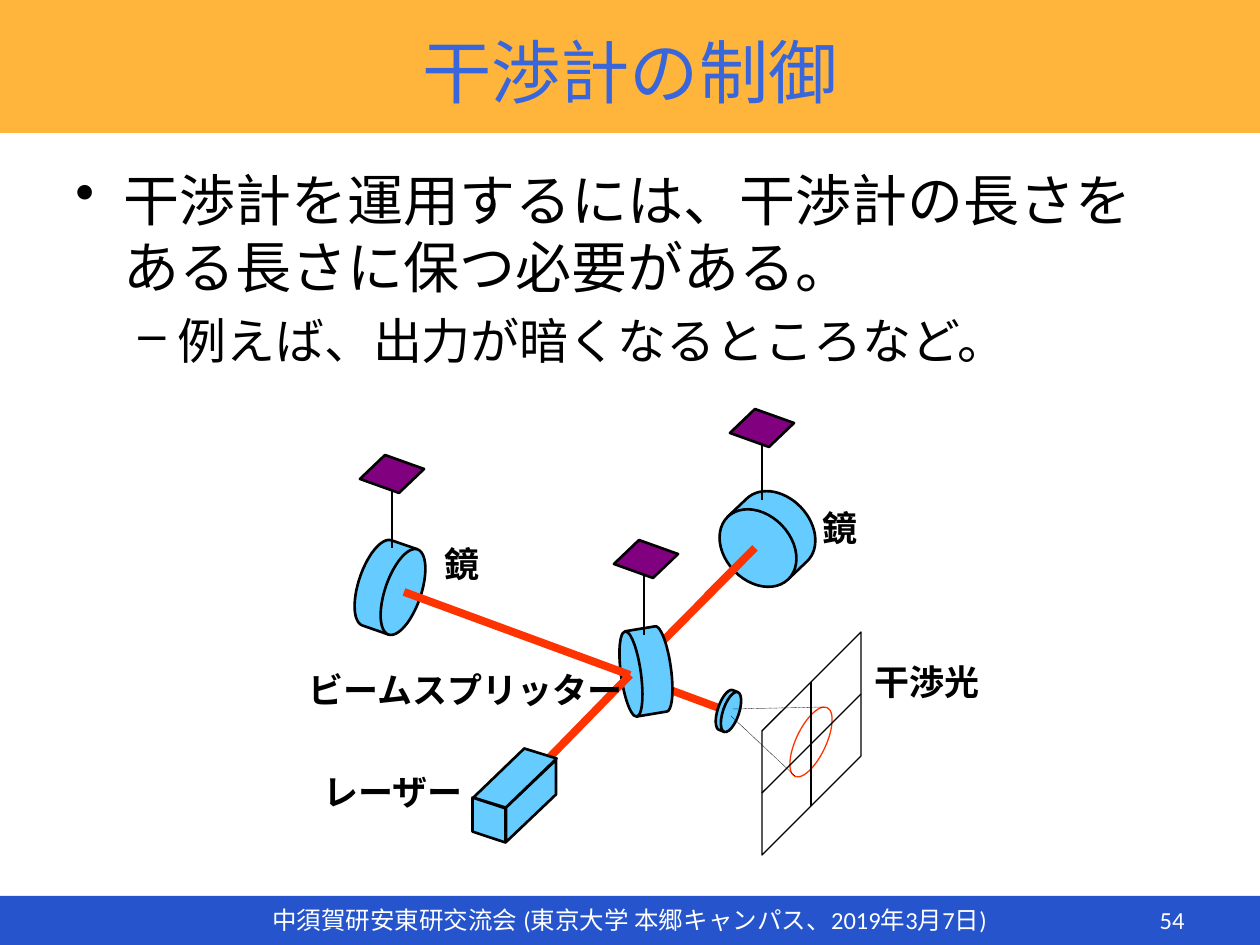
"""Build the slide on interferometer control."""
import math

from lxml import etree
from pptx import Presentation
from pptx.dml.color import RGBColor
from pptx.enum.dml import MSO_LINE
from pptx.enum.shapes import MSO_CONNECTOR, MSO_SHAPE
from pptx.enum.text import MSO_ANCHOR, PP_ALIGN
from pptx.oxml.ns import qn
from pptx.util import Pt

EMU_PER_PX = 914400 / 126
RECTANGLE = MSO_SHAPE.RECTANGLE
ELLIPSE = MSO_SHAPE.OVAL
PARALLELOGRAM = MSO_SHAPE.PARALLELOGRAM
STRAIGHT = MSO_CONNECTOR.STRAIGHT
DOTTED = MSO_LINE.ROUND_DOT
TOP, MIDDLE = MSO_ANCHOR.TOP, MSO_ANCHOR.MIDDLE
LEFT, CENTER, RIGHT = PP_ALIGN.LEFT, PP_ALIGN.CENTER, PP_ALIGN.RIGHT

FONT = "Calibri"
BLACK, WHITE = "000000", "FFFFFF"
GLASS, BEAM, PLATE = "66CCFF", "FF3300", "800080"
BEAM_WIDTH, EDGE_WIDTH, SCREEN_WIDTH, RAY_WIDTH = 4.5, 1.5, 0.75, 0.25

# box, colour
BANDS = [((0, 896, 1260, 49), "2554CC"), ((0, 0, 1260, 133), "FFB53C")]
# text, box, size, colour, alignment
FRAME_TEXTS = [
    ("中須賀研安東研交流会 (東京大学 本郷キャンパス、2019年3月7日)",
     (147, 895, 965, 50), 14, WHITE, CENTER),
    ("54", (903, 895, 294, 50), 14, WHITE, RIGHT),
    ("干渉計の制御", (63, 20, 1134, 101), 39.6, "3967DB", CENTER),
]
BODY_BOX = (63, 159, 1134, 238)
# text, bullet, level, left margin, hanging, size, space before
BODY = [
    ("干渉計を運用するには、干渉計の長さをある長さに保つ必要がある。", "•", 0, 48, 48, 32, 0),
    ("例えば、出力が暗くなるところなど。", "–", 1, 102, 39, 28, 6),
]
# text, left, top, width
LABELS = [
    ("レーザー", 311, 764, 195),
    ("干渉光", 862, 654, 195),
    ("ビームスプリッター", 296, 662, 343),
    ("鏡", 432, 536, 195),
    ("鏡", 810, 500, 195),
]
# front centre, front size, rotation, offset of the back face
SPLITTER = ((631, 674), (86, 20), 262.2, (30, -5))
LEFT_MIRROR = ((403, 592), (90, 36), 108.8, (-26, -9))
RIGHT_MIRROR = ((758, 548), (87, 66), 226, (19, -18))
LENS = ((731, 712), (42, 16), 108.8, (-5, -2))
# plate centre, wire foot
SPLITTER_HANGER = ((646, 559), (644, 635))
LEFT_HANGER = ((392, 474), (392, 548))
RIGHT_HANGER = ((762, 428), (762, 500))
# centre, size, rotation, slant
LASER_FACES = [
    ((489, 820), (45, 33), 90, 0.33),
    ((531, 801), (93, 25), 316.4, 0.96),
    ((515, 778), (68, 62), 197.2, 0.55),
]
BACK_BEAMS = [((665, 688), (719, 708)), ((658, 646), (761, 542))]
LASER_BEAM = ((548, 759), (630, 675))
LEFT_BEAM = ((404, 592), (630, 675))
RIGHT_BEAM = ((707, 596), (755, 548))
RAYS = [((733, 709), (825, 707)), ((731, 716), (795, 776))]
SCREEN = [(762, 855), (861, 756), (861, 632), (762, 731)]
SCREEN_CROSS = [((811, 682), (811, 806)), ((762, 793), (861, 694))]
RING = ((811, 742), (30, 76), 25.2)


def px(value):
    return round(value * EMU_PER_PX)


def color(value):
    return RGBColor.from_string(value)


def style(shape, fill, line=None, width=EDGE_WIDTH):
    shape.shadow.inherit = False
    if fill:
        shape.fill.solid()
        shape.fill.fore_color.rgb = color(fill)
    else:
        shape.fill.background()
    if line:
        shape.line.color.rgb = color(line)
        shape.line.width = Pt(width)
    else:
        shape.line.fill.background()


def add_centered(shapes, kind, center, size, rotation, fill, line=BLACK, width=EDGE_WIDTH):
    corner = [px(c - s / 2) for c, s in zip(center, size)]
    shape = shapes.add_shape(kind, *corner, *map(px, size))
    shape.rotation = rotation
    style(shape, fill, line, width)
    return shape


def add_line(shapes, ends, line, width, dash=None):
    start, end = ends
    connector = shapes.add_connector(STRAIGHT, *map(px, start + end))
    connector.line.color.rgb = color(line)
    connector.line.width = Pt(width)
    if dash:
        connector.line.dash_style = dash
    etree.SubElement(connector._element.spPr, qn("a:effectLst"))


def add_outline(shapes, points, fill, width):
    corners = [(px(x), px(y)) for x, y in points]
    builder = shapes.build_freeform(*corners[0])
    builder.add_line_segments(corners[1:], close=True)
    style(builder.convert_to_shape(), fill, BLACK, width)


def add_disc(shapes, center, size, rotation, depth):
    """Draw the side wall from tip to tip, then the front face over it."""
    angle = math.radians(rotation)
    cosine, sine = math.cos(angle), math.sin(angle)
    back = math.copysign(1, depth[1] * cosine - depth[0] * sine)

    def rim(turn, shift):
        along = size[0] / 2 * math.cos(turn)
        across = back * size[1] / 2 * math.sin(turn)
        return (center[0] + along * cosine - across * sine + shift[0],
                center[1] + along * sine + across * cosine + shift[1])

    steps = 30
    arc = [rim(math.pi * step / steps, depth) for step in range(steps + 1)]
    wall = [rim(0, (0, 0)), *arc, rim(math.pi, (0, 0))]
    add_outline(shapes, wall, GLASS, EDGE_WIDTH)
    add_centered(shapes, ELLIPSE, center, size, rotation, GLASS)


def add_slanted(shapes, center, size, rotation, slant, fill):
    shape = add_centered(shapes, PARALLELOGRAM, center, size, rotation, fill)
    shape.adjustments[0] = slant


def add_hanger(shapes, center, foot):
    add_line(shapes, (foot, (foot[0], center[1])), BLACK, EDGE_WIDTH)
    add_slanted(shapes, center, (57, 31), 19.7, 0.5, PLATE)


def add_frame(shapes, box, anchor):
    frame = shapes.add_textbox(*map(px, box)).text_frame
    frame.word_wrap = True
    frame.vertical_anchor = anchor
    return frame


def write(paragraph, text, size, fill=BLACK, alignment=LEFT, bold=False):
    paragraph.text = text
    paragraph.alignment = alignment
    font = paragraph.font
    font.name, font.size, font.bold = FONT, Pt(size), bold
    font.color.rgb = color(fill)


def add_body(shapes):
    frame = add_frame(shapes, BODY_BOX, TOP)
    for index, (text, bullet, level, margin, hanging, size, before) in enumerate(BODY):
        paragraph = frame.add_paragraph() if index else frame.paragraphs[0]
        paragraph.level = level
        paragraph.space_before = Pt(before)
        properties = paragraph._p.get_or_add_pPr()
        properties.set("marL", str(px(margin)))
        properties.set("indent", str(-px(hanging)))
        etree.SubElement(properties, qn("a:buChar")).set("char", bullet)
        write(paragraph, text, size)


def add_interferometer(shapes):
    for beam in BACK_BEAMS:
        add_line(shapes, beam, BEAM, BEAM_WIDTH)
    add_disc(shapes, *SPLITTER)
    add_hanger(shapes, *SPLITTER_HANGER)
    add_line(shapes, LASER_BEAM, BEAM, BEAM_WIDTH)
    for face in LASER_FACES:
        add_slanted(shapes, *face, GLASS)
    for text, left, top, width in LABELS:
        frame = add_frame(shapes, (left, top, width, 54), TOP)
        write(frame.paragraphs[0], text, 20, bold=True)
    for mirror, hanger, beam in [(LEFT_MIRROR, LEFT_HANGER, LEFT_BEAM),
                                 (RIGHT_MIRROR, RIGHT_HANGER, RIGHT_BEAM)]:
        add_disc(shapes, *mirror)
        add_hanger(shapes, *hanger)
        add_line(shapes, beam, BEAM, BEAM_WIDTH)
    add_centered(shapes, ELLIPSE, *RING, None, BEAM, SCREEN_WIDTH)
    add_disc(shapes, *LENS)
    for ray in RAYS:
        add_line(shapes, ray, BLACK, RAY_WIDTH, DOTTED)
    add_outline(shapes, SCREEN, None, SCREEN_WIDTH)
    for line in SCREEN_CROSS:
        add_line(shapes, line, BLACK, SCREEN_WIDTH)


def main():
    presentation = Presentation()
    presentation.slide_width, presentation.slide_height = px(1260), px(945)
    shapes = presentation.slides.add_slide(presentation.slide_layouts[6]).shapes
    for box, fill in BANDS:
        style(shapes.add_shape(RECTANGLE, *map(px, box)), fill)
    for text, box, size, fill, alignment in FRAME_TEXTS:
        frame = add_frame(shapes, box, MIDDLE)
        write(frame.paragraphs[0], text, size, fill, alignment)
    add_body(shapes)
    add_interferometer(shapes)
    presentation.save("out.pptx")


if __name__ == "__main__":
    main()
